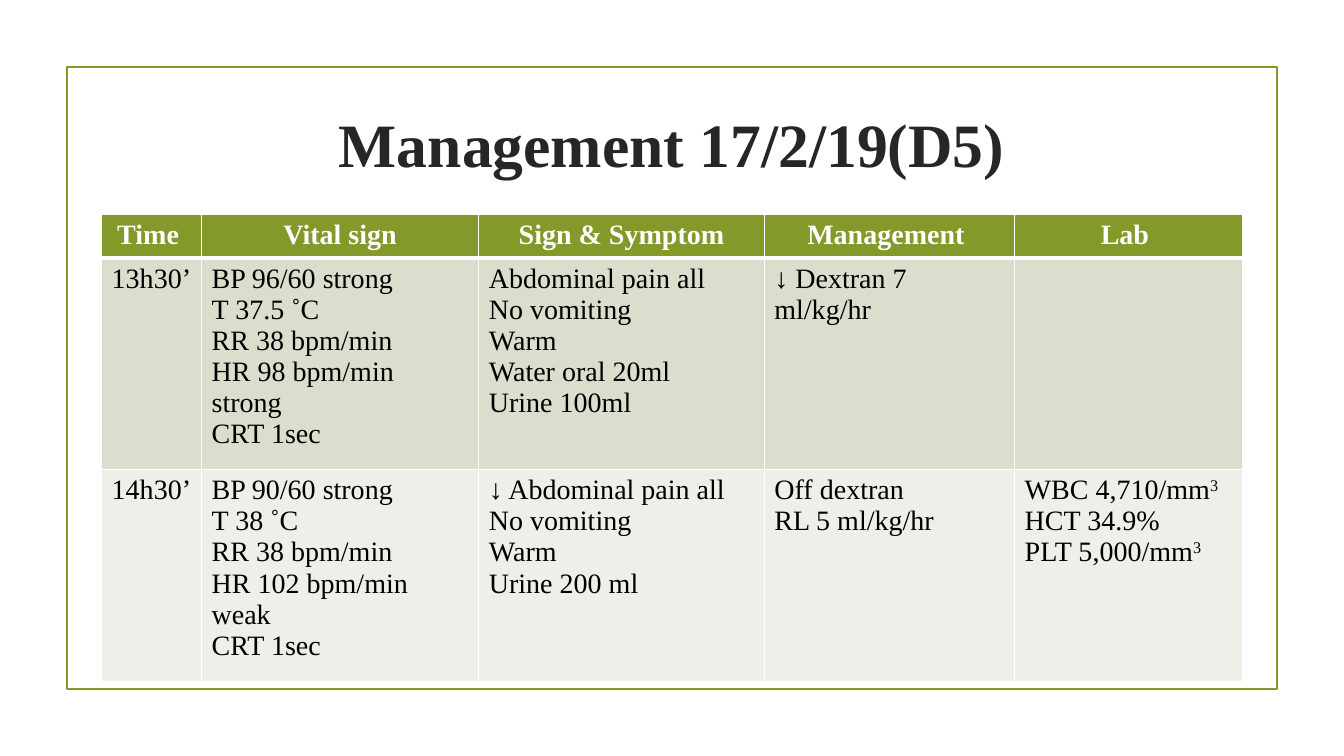
import dataclasses

import lxml.etree
import pptx
import pptx.dml.color
import pptx.enum.shapes
import pptx.enum.text
import pptx.oxml.ns
import pptx.util


@dataclasses.dataclass(frozen=True)
class Theme:
    """Colours, type sizes and line widths of the slide."""
    font: str = "Times New Roman"
    title_size: int = 44
    table_size: int = 20
    green: str = "83992A"
    title: str = "262626"
    white: str = "FFFFFF"
    black: str = "000000"
    bands: tuple = ("D9DECD", "EDEFE8")
    frame_line: float = 1.25
    thin_border: int = 1
    thick_border: int = 3


THEME = Theme()
GRID_COLUMNS, GRID_ROWS = 160, 90
UNIT = pptx.util.Inches(1 / 12)
CENTER = pptx.enum.text.PP_ALIGN.CENTER
LEFT = pptx.enum.text.PP_ALIGN.LEFT

COLUMN_SPANS = (11.9, 33, 34, 29.8, 27.1)
ROW_SPANS = (4.9, 23.4, 23.4)
HEADINGS = ("Time ", "Vital sign", "Sign & Symptom", "Management ", "Lab ")
OBSERVATIONS = (
    (
        ("13h30’",),
        ("BP 96/60 strong", "T 37.5 ˚C", "RR 38 bpm/min", "HR 98 bpm/min strong", "CRT 1sec"),
        ("Abdominal pain all", "No vomiting", "Warm", "Water oral 20ml", "Urine 100ml"),
        ("↓ Dextran 7 ml/kg/hr",),
        (),
    ),
    (
        ("14h30’",),
        ("BP 90/60 strong", "T 38 ˚C", "RR 38 bpm/min", "HR 102 bpm/min weak", "CRT 1sec"),
        ("↓ Abdominal pain all", "No vomiting", "Warm", "Urine 200 ml"),
        ("Off dextran", "RL 5 ml/kg/hr"),
        ("WBC 4,710/mm^3", "HCT 34.9%", "PLT 5,000/mm^3"),
    ),
)


def grid(*spans):
    """Turn grid spans into slide lengths."""
    return [round(span * UNIT) for span in spans]


def rgb(color):
    """Return the colour object of a hex string."""
    return pptx.dml.color.RGBColor.from_string(color)


def add_run(paragraph, text, size, color, bold, raised=False):
    """Add one styled run, raised for an exponent."""
    run = paragraph.add_run()
    run.text = text
    run.font.name = THEME.font
    run.font.size = pptx.util.Pt(size)
    run.font.bold = bold
    run.font.color.rgb = rgb(color)
    if raised:
        run.font._element.set("baseline", "30000")


def write_lines(text_frame, lines, size, color, bold, alignment):
    """Write one paragraph per line; text after a caret is an exponent."""
    for index, line in enumerate(lines):
        paragraph = text_frame.add_paragraph() if index else text_frame.paragraphs[0]
        paragraph.alignment = alignment
        base, _, exponent = line.partition("^")
        add_run(paragraph, base, size, color, bold)
        if exponent:
            add_run(paragraph, exponent, size, color, bold, raised=True)


def add_frame(slide, *spans):
    """Draw the green outline around the content."""
    shape = slide.shapes.add_shape(pptx.enum.shapes.MSO_SHAPE.RECTANGLE, *grid(*spans))
    shape.shadow.inherit = False
    shape.fill.background()
    shape.line.color.rgb = rgb(THEME.green)
    shape.line.width = pptx.util.Pt(THEME.frame_line)


def add_title(slide, text, *spans):
    """Add the centred slide title."""
    text_frame = slide.shapes.add_textbox(*grid(*spans)).text_frame
    text_frame.word_wrap = True
    text_frame.vertical_anchor = pptx.enum.text.MSO_ANCHOR.MIDDLE
    write_lines(text_frame, [text], THEME.title_size, THEME.title, True, CENTER)


def set_borders(cell, top, bottom):
    """Give a cell white borders of the stated top and bottom widths."""
    properties = cell._tc.get_or_add_tcPr()
    widths = {"L": THEME.thin_border, "R": THEME.thin_border, "T": top, "B": bottom}
    for side, width in widths.items():
        line = lxml.etree.SubElement(
            properties, pptx.oxml.ns.qn(f"a:ln{side}"), w=str(pptx.util.Pt(width)))
        fill = lxml.etree.SubElement(line, pptx.oxml.ns.qn("a:solidFill"))
        lxml.etree.SubElement(fill, pptx.oxml.ns.qn("a:srgbClr"), val=THEME.white)


def fill_cell(cell, lines, row):
    """Style a cell by its row and write its lines."""
    header = row == 0
    top = THEME.thick_border if row == 1 else THEME.thin_border
    bottom = THEME.thick_border if header else THEME.thin_border
    set_borders(cell, top, bottom)
    cell.fill.solid()
    cell.fill.fore_color.rgb = rgb(THEME.green if header else THEME.bands[row - 1])
    write_lines(cell.text_frame, lines, THEME.table_size,
                THEME.white if header else THEME.black, header,
                CENTER if header else LEFT)


def add_observation_table(slide, left, top):
    """Add the table of observations and treatment by time."""
    rows = [[(heading,) for heading in HEADINGS], *OBSERVATIONS]
    table = slide.shapes.add_table(
        len(rows), len(HEADINGS),
        *grid(left, top, sum(COLUMN_SPANS), sum(ROW_SPANS))).table
    for column, width in zip(table.columns, grid(*COLUMN_SPANS)):
        column.width = width
    for row, height in zip(table.rows, grid(*ROW_SPANS)):
        row.height = height
    for row_index, row in enumerate(rows):
        for column_index, lines in enumerate(row):
            fill_cell(table.cell(row_index, column_index), lines, row_index)


def main():
    """Build and save the slide."""
    presentation = pptx.Presentation()
    presentation.slide_width, presentation.slide_height = grid(GRID_COLUMNS, GRID_ROWS)
    slide = presentation.slides.add_slide(presentation.slide_layouts[6])
    add_frame(slide, 8, 8, 144, 74)
    add_title(slide, "Management 17/2/19(D5)", 17, 8.4, 126, 17.2)
    add_observation_table(slide, 12.1, 25.5)
    presentation.save("out.pptx")


if __name__ == "__main__":
    main()
